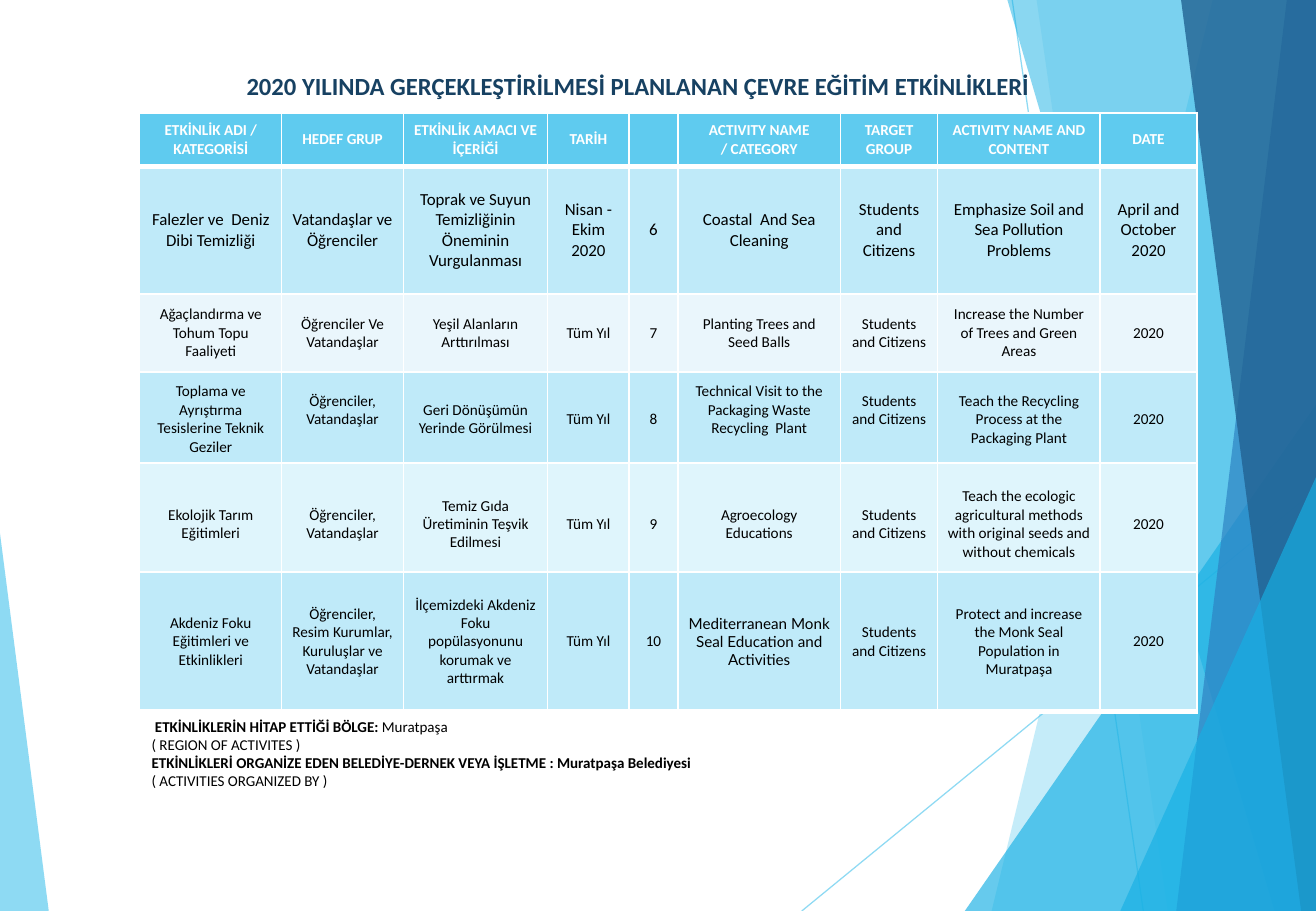
"""Builds the slide listing the environmental education activities planned for 2020."""
import pptx
import pptx.util
import pptx.dml.color
import pptx.enum.shapes
import pptx.enum.text
import pptx.oxml
import pptx.oxml.ns

Cm, Pt = pptx.util.Cm, pptx.util.Pt
RGBColor = pptx.dml.color.RGBColor
MIDDLE = pptx.enum.text.MSO_ANCHOR.MIDDLE
CENTER = pptx.enum.text.PP_ALIGN.CENTER
NAMESPACE = pptx.oxml.ns.nsdecls("a")

theme = {
    "font": "Calibri", "accent_font": "Lato",
    "title_size": 14.6, "large_size": 10, "body_size": 9, "footer_size": 8.9,
    "title": "174162", "white": "FFFFFF", "text": "000000",
    "sky": "5FCBEF", "cyan": "17B0E4", "blue": "2E83C3", "navy": "226292",
    "band_dark": "BFEAF9", "band_pale": "EAF6FC", "band_light": "DFF5FC",
}


def format_run(run, size, color, bold=False, name=theme["font"]):
    values = {"size": Pt(size), "bold": bold, "name": name}
    for attribute, value in values.items():
        setattr(run.font, attribute, value)
    run.font.color.rgb = RGBColor.from_string(color)


def set_alpha(color_format, percent):
    color = color_format._color._xClr
    color.append(pptx.oxml.parse_xml(f'<a:alpha {NAMESPACE} val="{percent * 1000}"/>'))


width, height = 27.51, 19.05
presentation = pptx.Presentation()
presentation.slide_width, presentation.slide_height = Cm(width), Cm(height)
slide = presentation.slides.add_slide(presentation.slide_layouts[6])
shapes = slide.shapes

for ends in [(21.16, 0, 23.9, height), (width, 10.24, 16.76, height)]:
    connector = shapes.add_connector(
        pptx.enum.shapes.MSO_CONNECTOR.STRAIGHT, *[Cm(value) for value in ends])
    connector.line.width = Pt(0.75)
    connector.line.color.rgb = RGBColor.from_string(theme["sky"])
    set_alpha(connector.line.color, 70)
    connector._element.spPr.append(pptx.oxml.parse_xml(f"<a:effectLst {NAMESPACE}/>"))

facets = [
    ("panel", "sky", 36, (25.35, 20.73)),
    ("panel", "sky", 20, (21.67, 24.41)),
    ("triangle", "cyan", 66, (20.17, 8.46, 7.34, 1)),
    ("panel", "cyan", 50, (21.06, 26.64)),
    ("panel", "blue", 70, (26.9, 24.59)),
    ("panel", "navy", 80, (24.69, 27.2)),
    ("triangle", "cyan", 66, (23.42, 9.98, 4.09, 1)),
    ("triangle", "sky", 70, (0, 11.15, 1.02, 0)),
]
for kind, color, alpha, geometry in facets:
    if kind == "panel":
        top_x, bottom_x = geometry
        builder = shapes.build_freeform(Cm(top_x), 0)
        corners = [(width, 0), (width, height), (bottom_x, height)]
        builder.add_line_segments([(Cm(x), Cm(y)) for x, y in corners])
        shape = builder.convert_to_shape()
    else:
        left, top, base, apex = geometry
        shape = shapes.add_shape(
            pptx.enum.shapes.MSO_SHAPE.ISOSCELES_TRIANGLE,
            Cm(left), Cm(top), Cm(base), Cm(height - top))
        shape.adjustments[0] = apex
    shape.shadow.inherit = False
    shape.line.fill.background()
    shape.fill.solid()
    shape.fill.fore_color.rgb = RGBColor.from_string(theme[color])
    set_alpha(shape.fill.fore_color, alpha)

title = shapes.add_textbox(Cm(3.91), Cm(1.3), Cm(18.87), Cm(0.99)).text_frame
title.word_wrap = True
title.vertical_anchor = MIDDLE
title.paragraphs[0].alignment = CENTER
run = title.paragraphs[0].add_run()
run.text = "2020 YILINDA GERÇEKLEŞTİRİLMESİ PLANLANAN ÇEVRE EĞİTİM ETKİNLİKLERİ"
format_run(run, theme["title_size"], theme["title"], True)

column_widths = [2.97, 2.54, 3.02, 1.7, 1.02, 3.4, 2.03, 3.4, 2.02]
header = ["ETKİNLİK ADI / KATEGORİSİ", "HEDEF GRUP", "ETKİNLİK AMACI VE İÇERİĞİ", "TARİH", "",
          "ACTIVITY NAME\n/ CATEGORY", "TARGET GROUP", "ACTIVITY NAME AND CONTENT", "DATE"]
cleaning = ["Falezler ve  Deniz Dibi Temizliği", "Vatandaşlar ve Öğrenciler",
            "Toprak ve Suyun Temizliğinin Öneminin Vurgulanması", "Nisan - Ekim 2020", "6",
            "Coastal  And Sea Cleaning", "Students and Citizens",
            "Emphasize Soil and Sea Pollution Problems", "April and October\n2020"]
planting = ["Ağaçlandırma ve Tohum Topu Faaliyeti", "Öğrenciler Ve Vatandaşlar",
            "Yeşil Alanların Arttırılması", "Tüm Yıl", "7", "Planting Trees and Seed Balls",
            "Students and Citizens", "Increase the Number of Trees and Green Areas", "2020"]
recycling = ["Toplama ve Ayrıştırma Tesislerine Teknik Geziler", "Öğrenciler, Vatandaşlar",
             "Geri Dönüşümün Yerinde Görülmesi", "Tüm Yıl", "8",
             "Technical Visit to the Packaging Waste Recycling  Plant", "Students and Citizens",
             "Teach the Recycling Process at the Packaging Plant", "2020"]
agroecology = ["Ekolojik Tarım Eğitimleri", "Öğrenciler, Vatandaşlar",
               "Temiz Gıda Üretiminin Teşvik Edilmesi", "Tüm Yıl", "9", "Agroecology Educations",
               "Students and Citizens",
               "Teach the ecologic agricultural methods with original seeds and without chemicals",
               "2020"]
monk_seal = ["Akdeniz Foku Eğitimleri ve Etkinlikleri",
             "Öğrenciler, Resim Kurumlar, Kuruluşlar ve Vatandaşlar",
             "İlçemizdeki Akdeniz Foku popülasyonunu korumak ve arttırmak", "Tüm Yıl", "10",
             "Mediterranean Monk Seal Education and Activities", "Students and Citizens",
             "Protect and increase the Monk Seal Population in Muratpaşa", "2020"]

tables = [
    (2.36, [(header, 1.12, "sky", 3), (cleaning, 2.67, "band_dark", 1),
            (planting, 1.63, "band_pale", 1), (recycling, 1.98, "band_dark", 1)]),
    (9.68, [(agroecology, 2.57, "band_light", 3)]),
    (11.96, [(monk_seal, 2.92, "band_dark", 3)]),
]
raised_cells = [(recycling, 1), (recycling, 5), (recycling, 6)]
margins = {"margin_left": 0.18, "margin_right": 0.18, "margin_top": 0.1, "margin_bottom": 0.1}

for top, rows in tables:
    table = shapes.add_table(
        len(rows), len(column_widths), Cm(2.92), Cm(top), Cm(sum(column_widths)),
        Cm(sum(row[1] for row in rows))).table
    table.horz_banding = False
    for column, column_width in zip(table.columns, column_widths):
        column.width = Cm(column_width)
    for row_index, (texts, row_height, fill, bottom_width) in enumerate(rows):
        table.rows[row_index].height = Cm(row_height)
        is_header = texts is header
        size = theme["large_size" if texts is cleaning else "body_size"]
        color = theme["white" if is_header else "text"]
        for column_index, text in enumerate(texts):
            cell = table.cell(row_index, column_index)
            cell.text = text
            cell.vertical_anchor = MIDDLE
            for attribute, value in margins.items():
                setattr(cell, attribute, Cm(value))
            if (texts, column_index) in raised_cells:
                cell.margin_bottom = Cm(0.49)
            cell.fill.solid()
            cell.fill.fore_color.rgb = RGBColor.from_string(theme[fill])
            name = theme["accent_font" if texts is monk_seal and column_index == 5 else "font"]
            for paragraph in cell.text_frame.paragraphs:
                paragraph.alignment = CENTER
                for run in paragraph.runs:
                    format_run(run, size, color, is_header, name)
            properties = cell._tc.get_or_add_tcPr()
            for position, side in enumerate("LRTB"):
                border = Pt(bottom_width if side == "B" else 1)
                properties.insert(position, pptx.oxml.parse_xml(
                    f'<a:ln{side} {NAMESPACE} w="{border}"><a:solidFill>'
                    f'<a:srgbClr val="{theme["white"]}"/></a:solidFill></a:ln{side}>'))

footer_lines = [
    [(" ETKİNLİKLERİN HİTAP ETTİĞİ BÖLGE: ", True), ("Muratpaşa", False)],
    [("( REGION OF ACTIVITES )", False)],
    [("ETKİNLİKLERİ ORGANİZE EDEN BELEDİYE-DERNEK VEYA İŞLETME : Muratpaşa Belediyesi", True)],
    [("( ACTIVITIES ORGANIZED BY )", False)],
]
footer = shapes.add_textbox(Cm(2.92), Cm(14.88), Cm(20.14), Cm(1.78)).text_frame
footer.word_wrap = True
for line_index, line in enumerate(footer_lines):
    paragraph = footer.add_paragraph() if line_index else footer.paragraphs[0]
    for text, bold in line:
        run = paragraph.add_run()
        run.text = text
        format_run(run, theme["footer_size"], theme["text"], bold)

presentation.save("out.pptx")
